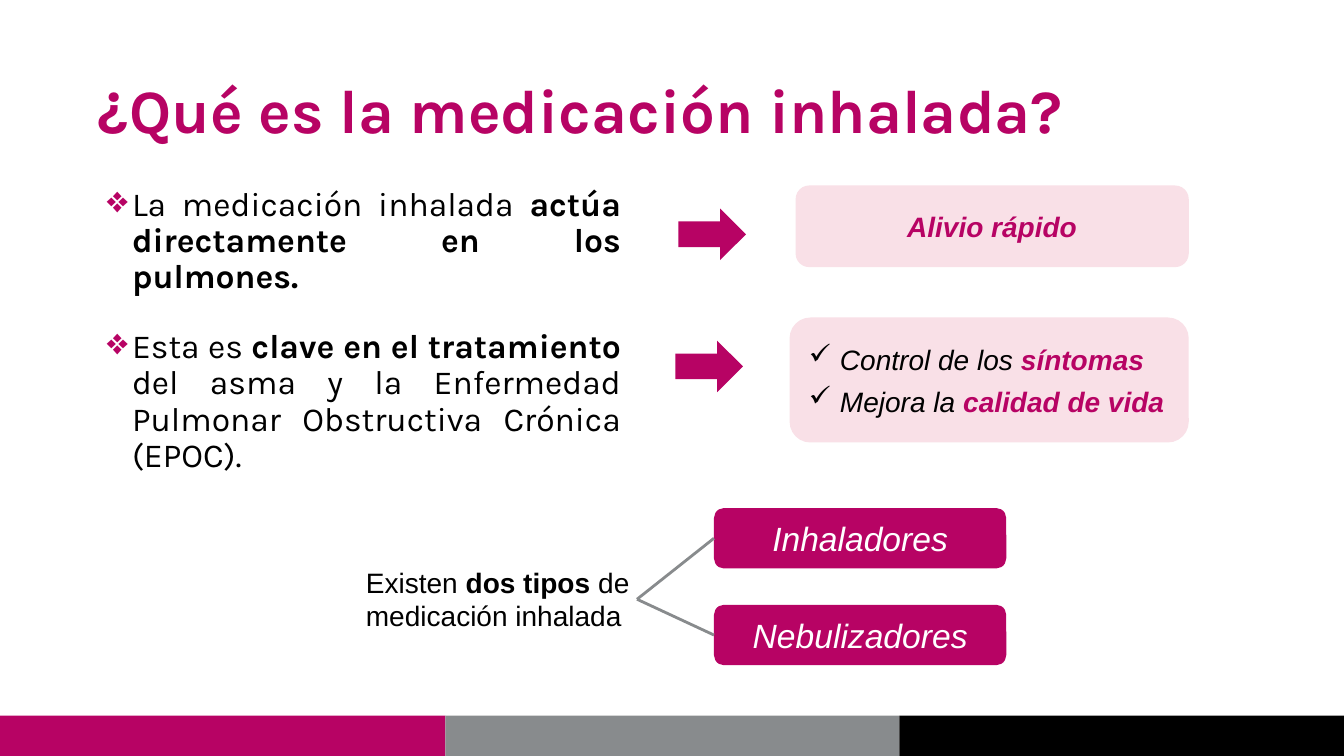
"""Builds the slide that explains what inhaled medication is."""
import itertools

import lxml.etree
import pptx
import pptx.dml.color
import pptx.enum.shapes
import pptx.enum.text
import pptx.oxml.ns
import pptx.util

COLORS = {
    "magenta": "B70364",
    "pink": "F9E0E7",
    "gray": "888B8D",
    "black": "000000",
    "white": "FFFFFF",
}
WIDTH = pptx.util.Inches(13.33)
HEIGHT = pptx.util.Inches(7.5)
COLUMN = WIDTH / 40
ROW = HEIGHT / 30
SHAPES = pptx.enum.shapes.MSO_SHAPE
ALIGN = pptx.enum.text.PP_ALIGN
ANCHOR = pptx.enum.text.MSO_ANCHOR


def columns(count):
    return pptx.util.Emu(round(count * COLUMN))


def rows(count):
    return pptx.util.Emu(round(count * ROW))


def area(left, top, width, height):
    return columns(left), rows(top), columns(width), rows(height)


def color(name):
    return pptx.dml.color.RGBColor.from_string(COLORS[name])


def add_child(parent, tag, **attributes):
    child = lxml.etree.SubElement(parent, pptx.oxml.ns.qn(tag))
    for key, value in attributes.items():
        child.set(key, value)
    return child


def add_panel(slide, preset, place, fill):
    panel = slide.shapes.add_shape(preset, *area(*place))
    panel.shadow.inherit = False
    panel.fill.solid()
    panel.fill.fore_color.rgb = color(fill)
    panel.line.fill.background()
    return panel


def prepare_text(holder, anchor, wrap=True):
    frame = holder.text_frame
    frame.margin_left = frame.margin_right = columns(0.15)
    frame.margin_top = frame.margin_bottom = rows(0.2)
    frame.vertical_anchor = anchor
    frame.word_wrap = wrap
    return frame


def add_text_box(slide, place, anchor=ANCHOR.TOP):
    return slide.shapes.add_textbox(*area(*place))


def add_bullet(paragraph, symbol, margin, hanging, tint=None):
    properties = paragraph._p.get_or_add_pPr()
    properties.set("marL", str(columns(margin)))
    properties.set("indent", str(-columns(hanging)))
    if tint:
        add_child(add_child(properties, "a:buClr"), "a:srgbClr", val=COLORS[tint])
        add_child(properties, "a:buSzPct", val="110000")
    add_child(properties, "a:buChar", char=symbol)


def write(paragraph, pieces, size, face="Arial", italic=False, align=ALIGN.LEFT):
    """Each piece is (text, colour name, bold)."""
    paragraph.alignment = align
    for words, ink, bold in pieces:
        run = paragraph.add_run()
        run.text = words
        run.font.name = face
        run.font.size = pptx.util.Pt(size)
        run.font.bold = bold
        run.font.italic = italic
        run.font.color.rgb = color(ink)


def add_footer(slide):
    edges = itertools.pairwise((0, 13.26, 26.77, 40))
    for (left, right), fill in zip(edges, ("magenta", "gray", "black")):
        add_panel(slide, SHAPES.RECTANGLE, (left, 28.4, right - left, 1.6), fill)


def add_title(slide, words):
    box = add_text_box(slide, (2.76, 1.6, 34.51, 5.8))
    paragraph = prepare_text(box, ANCHOR.MIDDLE).paragraphs[0]
    paragraph.line_spacing = 0.9
    write(paragraph, [(words, "magenta", True)], 44, "Karla")


def add_statement(slide, top, height, pieces):
    box = add_text_box(slide, (2.85, top, 15.78, height))
    paragraph = prepare_text(box, ANCHOR.TOP).paragraphs[0]
    add_bullet(paragraph, "❖", 0.93, 0.75, "magenta")
    paragraph.line_spacing = 0.9
    write(paragraph, pieces, 24, "Karla", align=ALIGN.JUSTIFY)


def add_label(slide, place, fill, words, ink, size, bold):
    label = add_panel(slide, SHAPES.ROUNDED_RECTANGLE, place, fill)
    paragraph = prepare_text(label, ANCHOR.MIDDLE, wrap=False).paragraphs[0]
    write(paragraph, [(words, ink, bold)], size, italic=True, align=ALIGN.CENTER)
    return label


def add_checklist(slide, place, items):
    panel = add_panel(slide, SHAPES.ROUNDED_RECTANGLE, place, "pink")
    frame = prepare_text(panel, ANCHOR.MIDDLE)
    for index, (lead, key) in enumerate(items):
        paragraph = frame.add_paragraph() if index else frame.paragraphs[0]
        add_bullet(paragraph, "✓", 1.17, 0.93)
        if index:
            paragraph.space_before = pptx.util.Pt(6)
        write(paragraph, [(lead, "black", False), (key, "magenta", True)], 20, italic=True)


def add_branch(slide, source, target):
    branch = slide.shapes.add_connector(
        pptx.enum.shapes.MSO_CONNECTOR.STRAIGHT, 0, 0, 0, 0)
    branch.begin_connect(source, 3)
    branch.end_connect(target, 1)
    branch.line.color.rgb = color("gray")
    branch.line.width = pptx.util.Pt(2)
    add_child(branch._element.spPr, "a:effectLst")


def add_types(slide):
    intro = add_text_box(slide, (10.74, 22.24, 8.22, 3.08))
    write(prepare_text(intro, ANCHOR.TOP).paragraphs[0], [
        ("Existen", "black", False),
        (" dos tipos ", "black", True),
        ("de medicación inhalada", "black", False),
    ], 20)
    for index, words in enumerate(("Inhaladores", "Nebulizadores")):
        place = (21.25, 20.16 + 3.84 * index, 8.7, 2.4)
        kind = add_label(slide, place, "magenta", words, "white", 24, False)
        add_branch(slide, intro, kind)


def main():
    deck = pptx.Presentation()
    deck.slide_width, deck.slide_height = WIDTH, HEIGHT
    slide = deck.slides.add_slide(deck.slide_layouts[6])
    add_footer(slide)
    add_title(slide, "¿Qué es la medicación inhalada?")
    add_statement(slide, 7.24, 3.88, [
        ("La medicación inhalada ", "black", False),
        ("actúa directamente en los pulmones.", "black", True),
    ])
    add_statement(slide, 12.88, 6.24, [
        ("Esta es ", "black", False),
        ("clave en el tratamiento ", "black", True),
        ("del asma y la Enfermedad Pulmonar Obstructiva Crónica (EPOC).", "black", False),
    ])
    for left, top in ((20.19, 8.28), (20.1, 13.52)):
        add_panel(slide, SHAPES.RIGHT_ARROW, (left, top, 2.01, 2.04), "magenta")
    add_label(slide, (23.68, 7.36, 11.7, 3.24), "pink", "Alivio rápido", "magenta", 20, True)
    add_checklist(slide, (23.5, 12.6, 11.88, 4.96), [
        ("Control de los ", "síntomas"),
        ("Mejora la ", "calidad de vida"),
    ])
    add_types(slide)
    deck.save("out.pptx")


if __name__ == "__main__":
    main()
